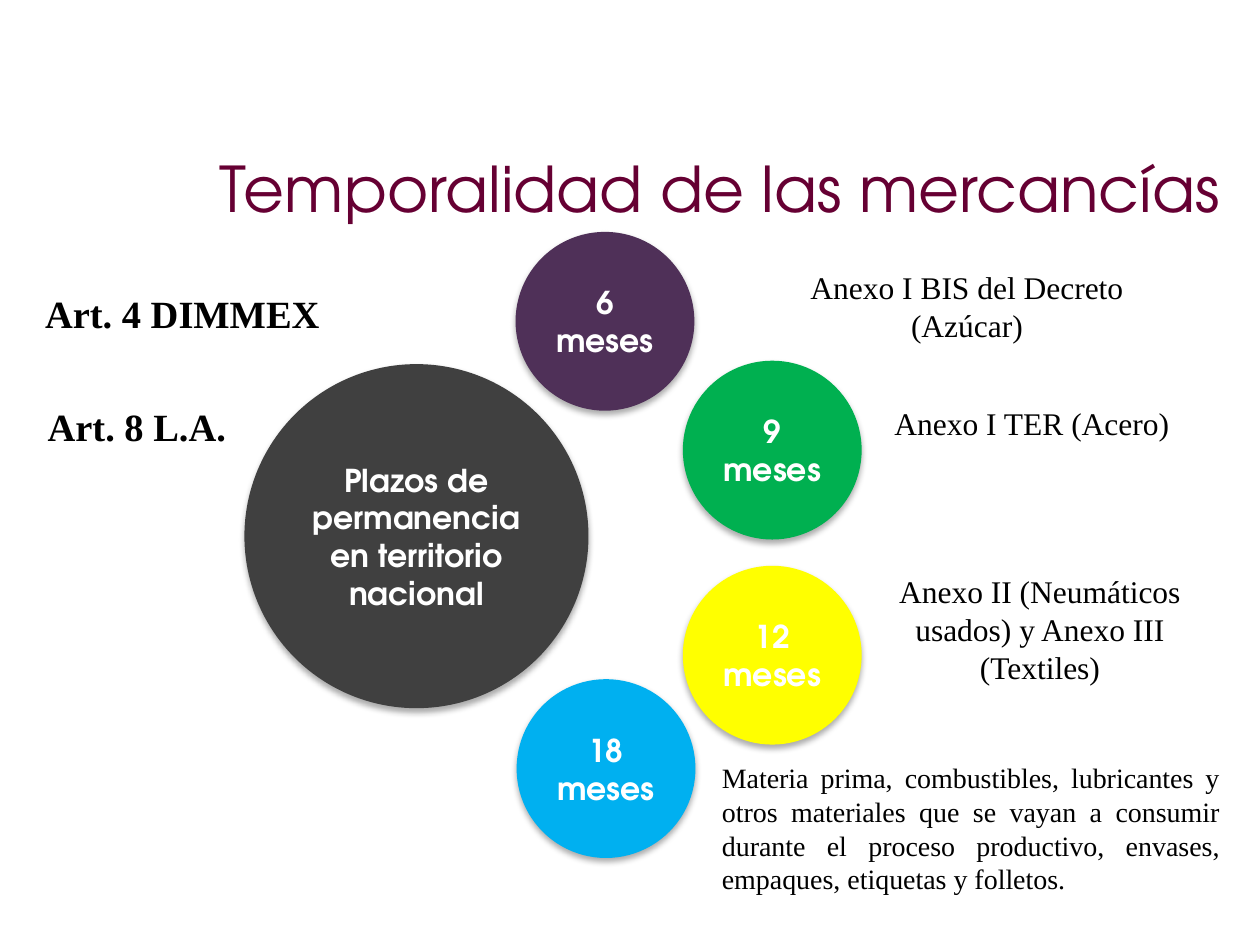
import pptx
import pptx.util
import pptx.dml.color
import pptx.enum.shapes
import pptx.enum.text
import pptx.oxml

Pt = pptx.util.Pt
ALIGN = pptx.enum.text.PP_ALIGN
ANCHOR = pptx.enum.text.MSO_ANCHOR
SANS, SERIF = "TeX Gyre Adventor", "Times New Roman"
SHADOW = (
    '<a:effectLst xmlns:a="http://schemas.openxmlformats.org/drawingml/2006/main">'
    '<a:outerShdw blurRad="44450" dist="27940" dir="5400000" algn="ctr" rotWithShape="0">'
    '<a:srgbClr val="000000"><a:alpha val="32000"/></a:srgbClr>'
    '</a:outerShdw></a:effectLst>'
)


def color(code):
    return pptx.dml.color.RGBColor.from_string(code)


def write(shape, text, font, size, code, align, anchor, bold=False):
    frame = shape.text_frame
    frame.word_wrap = True
    frame.vertical_anchor = anchor
    para = frame.paragraphs[0]
    para.text = text
    para.alignment = align
    para.font.name = font
    para.font.size = Pt(size)
    para.font.bold = bold
    para.font.color.rgb = color(code)
    return para


deck = pptx.Presentation()
deck.slide_width, deck.slide_height = Pt(720), Pt(540)
slide = deck.slides.add_slide(deck.slide_layouts[6])
shapes = slide.shapes

title = shapes.add_textbox(Pt(90.7), Pt(66.2), Pt(613.4), Pt(66.2))
write(title, "Temporalidad de las mercancías", SANS, 36, "660033",
      ALIGN.RIGHT, ANCHOR.BOTTOM)

# Circles: left, top, diameter, fill, label
circles = [
    (139.7, 208.1, 196.6, "404040", "Plazos de permanencia en territorio nacional"),
    (294.6, 132.5, 102.2, "4F3058", "6 meses"),
    (390.2, 206.1, 102.2, "00B050", "9 meses"),
    (390.2, 323.3, 102.2, "FFFF00", "12 meses"),
    (295.2, 388.1, 102.2, "00B0F0", "18 meses"),
]
for left, top, size, fill, label in circles:
    disc = shapes.add_shape(
        pptx.enum.shapes.MSO_SHAPE.FLOWCHART_CONNECTOR,
        Pt(left), Pt(top), Pt(size), Pt(size))
    disc.fill.solid()
    disc.fill.fore_color.rgb = color(fill)
    disc.line.fill.background()
    disc._element.spPr.append(pptx.oxml.parse_xml(SHADOW))
    write(disc, label, SANS, 18, "FFFFFF", ALIGN.CENTER, ANCHOR.MIDDLE, True)

# Notes: left, top, width, height, font size, alignment, bold, text
notes = [
    (18.7, 162, 180.7, 33.8, 22, ALIGN.JUSTIFY, True, "Art. 4 DIMMEX"),
    (20.2, 226.8, 170.6, 33.8, 22, ALIGN.JUSTIFY, True, "Art. 8 L.A."),
    (433.4, 149.8, 238.3, 46.8, 18, ALIGN.CENTER, False,
     "Anexo I BIS del Decreto (Azúcar)"),
    (492.5, 227.5, 194.4, 33.8, 18, ALIGN.CENTER, False, "Anexo I TER (Acero)"),
    (501.8, 323.3, 185, 71.3, 18, ALIGN.CENTER, False,
     "Anexo II (Neumáticos usados) y Anexo III (Textiles)"),
    (405.4, 431.3, 298.8, 87.8, 16, ALIGN.JUSTIFY, False,
     "Materia prima, combustibles, lubricantes y otros materiales que se vayan "
     "a consumir durante el proceso productivo, envases, empaques, etiquetas y "
     "folletos."),
]
for left, top, width, height, size, align, bold, text in notes:
    box = shapes.add_textbox(Pt(left), Pt(top), Pt(width), Pt(height))
    para = write(box, text, SERIF, size, "000000", align, ANCHOR.TOP, bold)
    para.space_before = Pt(2)

deck.save("out.pptx")
